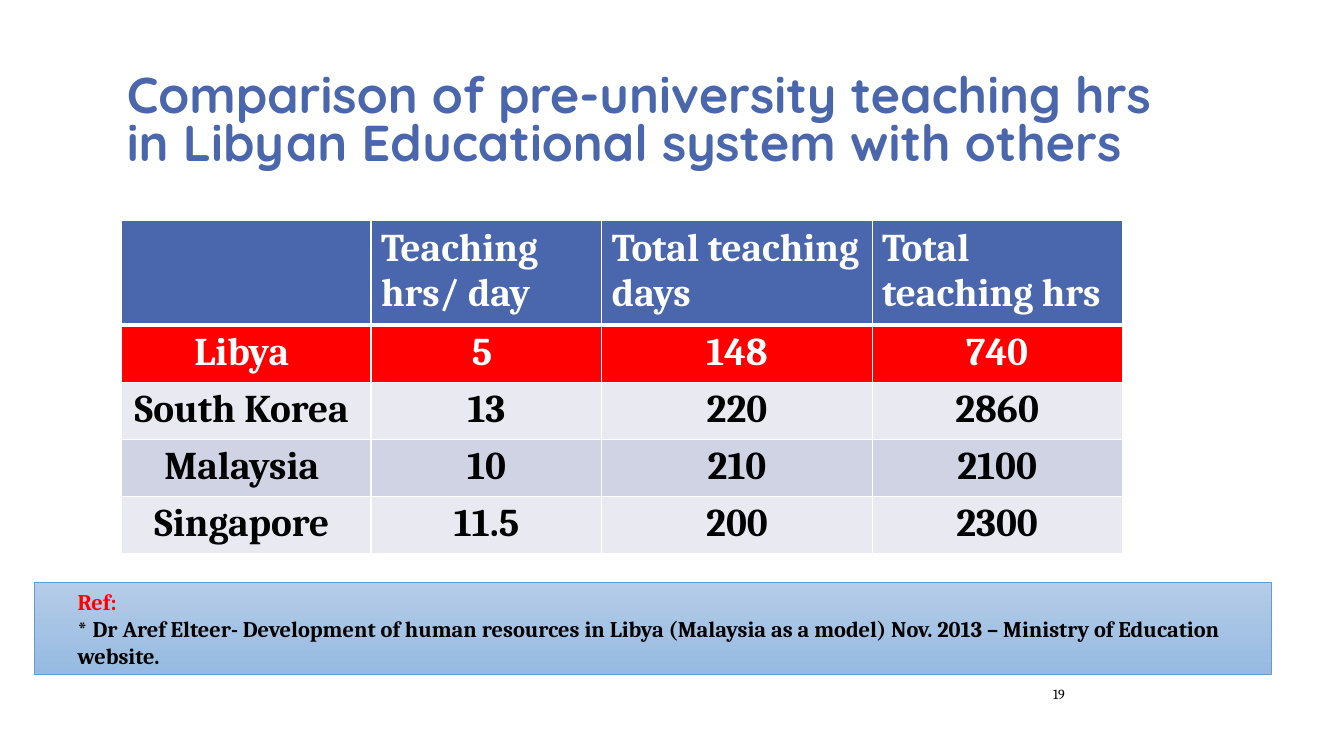
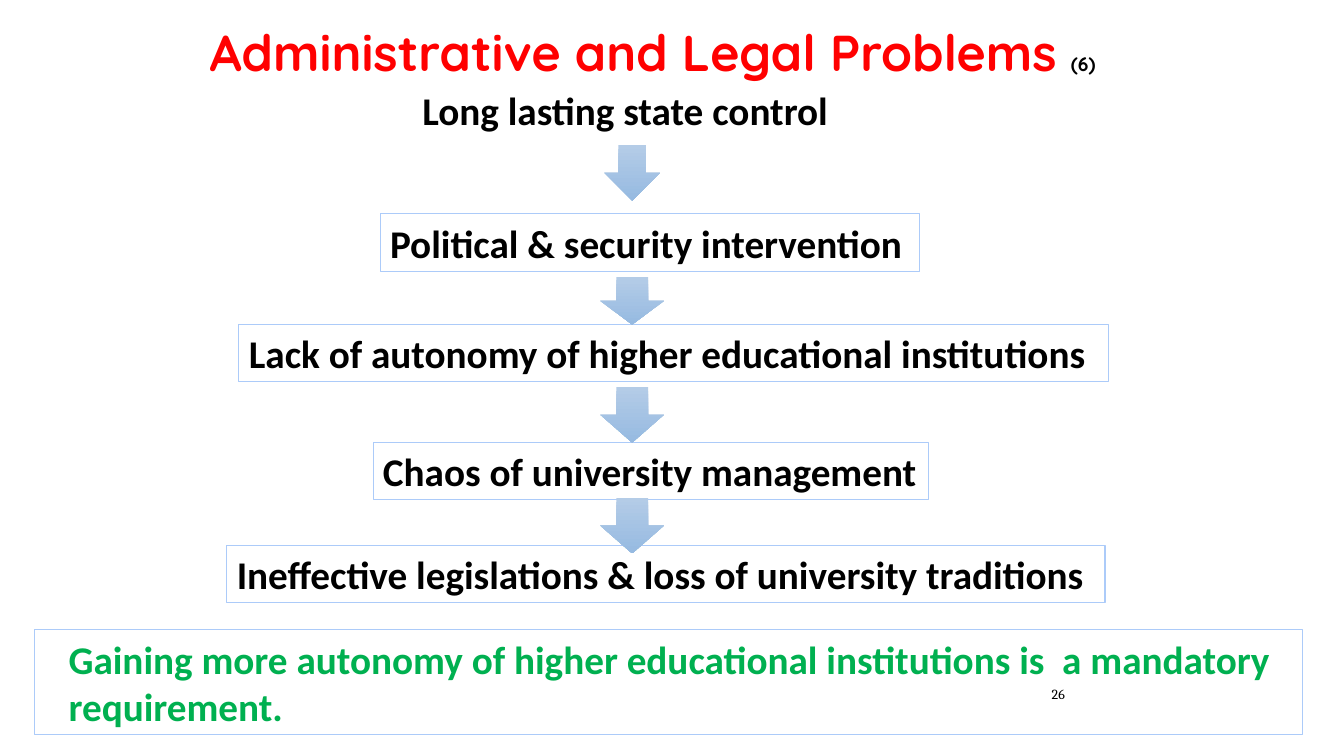
from lxml.etree import SubElement
from pptx import Presentation
from pptx.dml.color import RGBColor
from pptx.enum.shapes import MSO_SHAPE as Shape
from pptx.enum.text import MSO_ANCHOR as Anchor, PP_ALIGN as Align
from pptx.oxml.ns import qn
from pptx.util import Inches, Pt

BLUE = RGBColor(0x4A, 0x66, 0xAC)
RED = RGBColor(0xFF, 0x00, 0x00)
GREEN = RGBColor(0x00, 0xB0, 0x50)
BLACK = RGBColor(0x00, 0x00, 0x00)
WHITE = RGBColor(0xFF, 0xFF, 0xFF)
BAND_LIGHT = RGBColor(0xE9, 0xEA, 0xF1)
BAND_DARK = RGBColor(0xD0, 0xD3, 0xE3)
GRADIENT_TOP = RGBColor(0xB4, 0xCC, 0xE7)
GRADIENT_BOTTOM = RGBColor(0x96, 0xBA, 0xE1)
NOTE_LINE = RGBColor(0x62, 0x9D, 0xD1)
BOX_LINE = RGBColor(0xAC, 0xCB, 0xF9)

TITLE = {"name": "Quicksand", "size": Pt(36), "bold": True}
TITLE_MARK = {**TITLE, "size": Pt(14)}
BODY = {"name": "Calibri", "size": Pt(28), "bold": True}
CELL = {"name": "Cambria", "size": Pt(28), "bold": True}
REFERENCE = {**CELL, "size": Pt(16)}
NUMBER = {"name": "Cambria", "size": Pt(10), "bold": False}

ARROW_CENTER = 6.27


class Deck:
    def __init__(self):
        self.presentation = Presentation()
        self.presentation.slide_width = Inches(13.33)
        self.presentation.slide_height = Inches(7.5)
        self.slide = None

    def new_slide(self):
        self.slide = self.presentation.slides.add_slide(self.presentation.slide_layouts[6])

    def fill_text(self, frame, paragraphs, **formats):
        for index, runs in enumerate(paragraphs):
            paragraph = frame.paragraphs[0] if index == 0 else frame.add_paragraph()
            for name, value in {"alignment": Align.LEFT, **formats}.items():
                setattr(paragraph, name, value)
            for text, style, color in runs:
                for position, line in enumerate(text.split("\n")):
                    if position:
                        paragraph.add_line_break()
                    run = paragraph.add_run()
                    run.text = line
                    for name, value in style.items():
                        setattr(run.font, name, value)
                    run.font.color.rgb = color

    def text(self, place, paragraphs, anchor=Anchor.TOP, **formats):
        frame = self.slide.shapes.add_textbox(*map(Inches, place)).text_frame
        frame.word_wrap = True
        frame.vertical_anchor = anchor
        self.fill_text(frame, paragraphs, **formats)

    def title(self, place, *runs):
        self.text(place, [runs], Anchor.BOTTOM, line_spacing=0.8)

    def page_number(self, number):
        self.text((9.33, 6.73, 1.33, 0.3), [[(str(number), NUMBER, BLACK)]],
                  Anchor.MIDDLE, alignment=Align.RIGHT)

    def shape(self, kind, place):
        shape = self.slide.shapes.add_shape(kind, *map(Inches, place))
        shape.shadow.inherit = False
        return shape

    def gradient(self, shape):
        shape.fill.gradient()
        shape.fill.gradient_angle = 270
        for stop, color in zip(shape.fill.gradient_stops, (GRADIENT_TOP, GRADIENT_BOTTOM)):
            stop.color.rgb = color

    def box(self, place, paragraphs, line=BOX_LINE, width=0.75, inset=0.1, shaded=False):
        shape = self.shape(Shape.RECTANGLE, place)
        if shaded:
            self.gradient(shape)
        else:
            shape.fill.solid()
            shape.fill.fore_color.rgb = WHITE
        shape.line.color.rgb = line
        shape.line.width = Pt(width)
        frame = shape.text_frame
        settings = {"word_wrap": True, "vertical_anchor": Anchor.MIDDLE,
                    "margin_left": Inches(inset), "margin_right": 0}
        for name, value in settings.items():
            setattr(frame, name, value)
        self.fill_text(frame, paragraphs)

    def arrow(self, top, width, height):
        shape = self.shape(Shape.DOWN_ARROW, (ARROW_CENTER - width / 2, top, width, height))
        self.gradient(shape)
        shape.line.fill.background()

    def borders(self, cell, bottom, top):
        properties = cell._tc.get_or_add_tcPr()
        for side, width in (("lnL", 1), ("lnR", 1), ("lnT", top), ("lnB", bottom)):
            line = SubElement(properties, qn(f"a:{side}"), w=str(Pt(width)))
            fill = SubElement(line, qn("a:solidFill"))
            SubElement(fill, qn("a:srgbClr"), val=str(WHITE))

    def table(self, left, top, widths, heights, rows, fills, colors):
        place = (left, top, sum(widths), sum(heights))
        table = self.slide.shapes.add_table(len(rows), len(widths), *map(Inches, place)).table
        for column, width in zip(table.columns, widths):
            column.width = Inches(width)
        for index, (row, height) in enumerate(zip(table.rows, heights)):
            row.height = Inches(height)
            for cell, value in zip(row.cells, rows[index]):
                self.borders(cell, bottom=3 if index == 0 else 1, top=3 if index == 1 else 1)
                cell.fill.solid()
                cell.fill.fore_color.rgb = fills[index]
                self.fill_text(cell.text_frame, [[(value, CELL, colors[index])]],
                               alignment=Align.CENTER if index else Align.LEFT)


def comparison_slide(deck):
    deck.new_slide()
    deck.page_number(19)
    deck.table(
        1.2, 2.19, (2.48, 2.29, 2.68, 2.48), (0.99,) + (0.55,) * 4,
        [
            ("", "Teaching hrs/ day", "Total teaching days", "Total teaching hrs"),
            ("Libya ", "5 ", "148", "740"),
            ("South Korea ", "13", "220", "2860"),
            ("Malaysia ", "10", "210", "2100"),
            ("Singapore ", "11.5", "200", "2300"),
        ],
        fills=(BLUE, RED, BAND_LIGHT, BAND_DARK, BAND_LIGHT),
        colors=(WHITE, WHITE, BLACK, BLACK, BLACK),
    )
    heading = ("Comparison of pre-university teaching hrs\n"
               "in Libyan Educational system with others")
    deck.title((1.16, 0.58, 10.42, 1.17), (heading, TITLE, BLUE))
    source = ("* Dr Aref Elteer- Development of human resources in Libya "
              "(Malaysia as a model) Nov. 2013 – Ministry of Education website.")
    deck.box((0.34, 5.78, 12.27, 0.91),
             [[("Ref:", REFERENCE, RED)], [(source, REFERENCE, BLACK)]],
             line=NOTE_LINE, width=0.5, inset=0.43, shaded=True)


def problems_slide(deck):
    deck.new_slide()
    deck.title((1.98, 0, 9.5, 0.86),
               ("Administrative and Legal Problems ", TITLE, RED), ("(6)", TITLE_MARK, BLACK))
    deck.text((1.06, 0.86, 10.28, 0.7), [[("Long lasting state control", BODY, BLACK)]],
              alignment=Align.CENTER, line_spacing=0.9)
    steps = [
        (3.77, 2.12, 5.35, "Political & security intervention"),
        (2.37, 3.22, 8.62, "Lack of autonomy of higher educational institutions"),
        (3.7, 4.39, 5.51, "Chaos of university management"),
        (2.25, 5.41, 8.71, "Ineffective legislations & loss of university traditions"),
    ]
    for left, top, width, label in steps:
        deck.box((left, top, width, 0.57), [[(label, BODY, BLACK)]])
    conclusion = ("Gaining more autonomy of higher educational institutions is  "
                  "a mandatory requirement.")
    deck.box((0.34, 6.25, 12.58, 1.04), [[(conclusion, BODY, GREEN)]], inset=0.34)
    for arrow in ((1.44, 0.55, 0.55), (2.75, 0.63, 0.47), (3.84, 0.63, 0.55), (4.94, 0.63, 0.55)):
        deck.arrow(*arrow)
    deck.page_number(26)


def main():
    deck = Deck()
    comparison_slide(deck)
    problems_slide(deck)
    deck.presentation.save("out.pptx")


if __name__ == "__main__":
    main()
